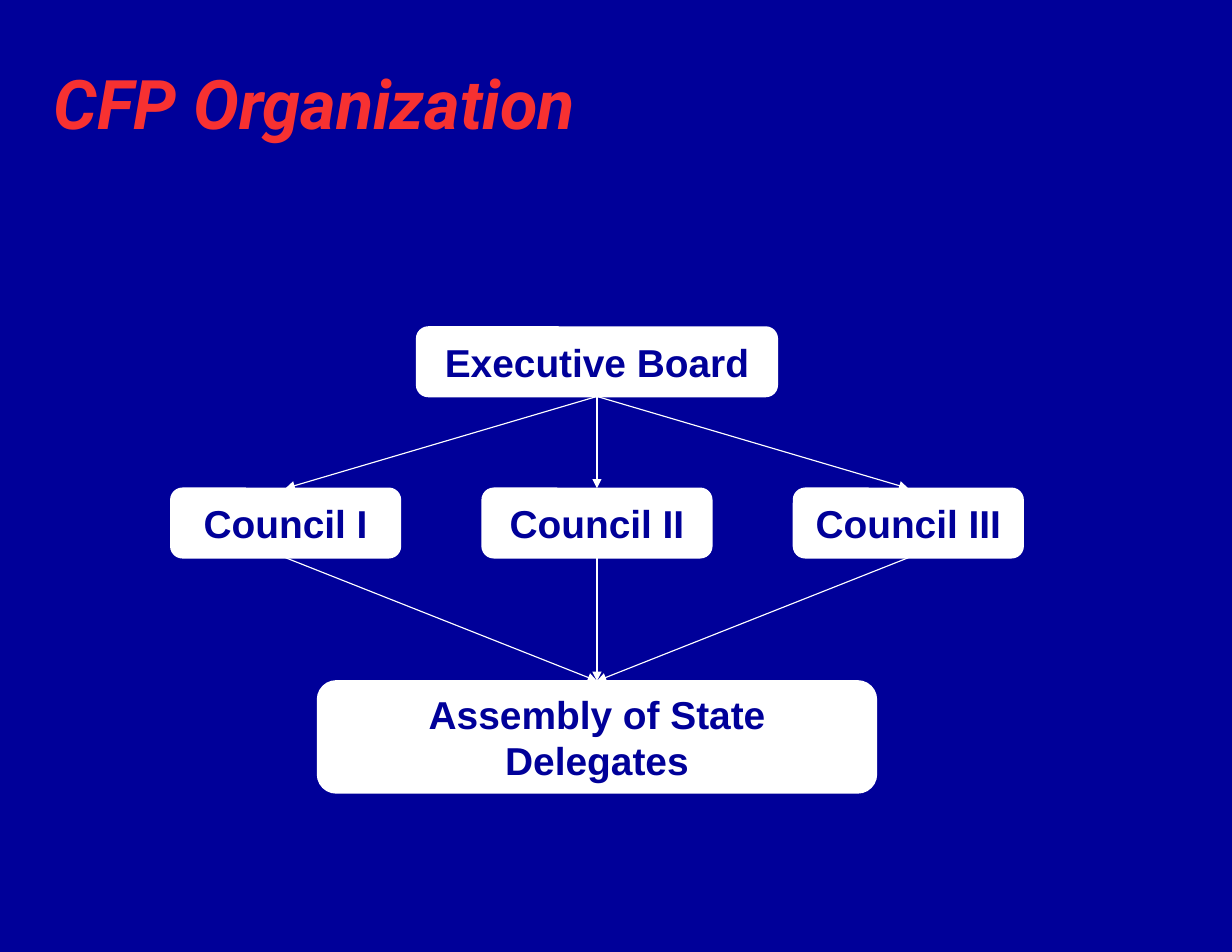
from dataclasses import dataclass

from lxml import etree
from pptx import Presentation
from pptx import util as u
from pptx.dml.color import RGBColor
from pptx.enum import shapes, text
from pptx.oxml.ns import qn


@dataclass
class Theme:
    navy: RGBColor = RGBColor.from_string("000099")
    white: RGBColor = RGBColor.from_string("FFFFFF")
    red: RGBColor = RGBColor.from_string("F73131")
    head: u.Pt = u.Pt(44)
    label: u.Pt = u.Pt(25)


theme = Theme()
FRAME = {
    "word_wrap": True, "auto_size": text.MSO_AUTO_SIZE.NONE,
    "vertical_anchor": text.MSO_ANCHOR.MIDDLE,
    "margin_left": u.Inches(0.11), "margin_right": u.Inches(0.11),
    "margin_top": u.Inches(0.06), "margin_bottom": u.Inches(0.06),
}


def write(shape, words, align, color, **font):
    frame = shape.text_frame
    for key, val in FRAME.items():
        setattr(frame, key, val)
    para = frame.paragraphs[0]
    para.alignment = align
    run = para.add_run()
    run.text = words
    for key, val in font.items():
        setattr(run.font, key, val)
    run.font.color.rgb = color


def link(start, end):
    line = slide.shapes.add_connector(shapes.MSO_CONNECTOR.STRAIGHT, 0, 0, 0, 0)
    line.begin_connect(start, 2)  # bottom centre
    line.end_connect(end, 0)  # top centre
    line.line.color.rgb = theme.white
    line.line.width = u.Pt(0.75)
    etree.SubElement(line.line._get_or_add_ln(), qn("a:tailEnd"), type="triangle")
    etree.SubElement(line._element.spPr, qn("a:effectLst"))


# Slide and background
deck = Presentation()
deck.slide_width, deck.slide_height = u.Inches(11), u.Inches(8.5)
slide = deck.slides.add_slide(deck.slide_layouts[5])
slide.background.fill.solid()
slide.background.fill.fore_color.rgb = theme.navy

# Title
title = slide.shapes.title
title.left, title.top = u.Inches(0.37), u.Inches(0.28)
title.width, title.height = u.Inches(8.43), u.Inches(1.26)
write(title, "CFP Organization", text.PP_ALIGN.LEFT, theme.red,
      name="Roboto", size=theme.head, bold=True, italic=True)

# Boxes: centre x, top, width, height
MID, GAP = 5.33, 2.78
nodes = [("Executive Board", MID, 2.92, 3.22, 0.62)]
for step, mark in enumerate(("I", "II", "III"), -1):
    nodes.append((f"Council {mark}", MID + step * GAP, 4.36, 2.05, 0.62))
nodes.append(("Assembly of State Delegates", MID, 6.08, 4.99, 1))

boxes = []
for words, mid, top, wide, high in nodes:
    box = slide.shapes.add_shape(
        shapes.MSO_SHAPE.ROUNDED_RECTANGLE,
        *map(u.Inches, (mid - wide / 2, top, wide, high)))
    box.shadow.inherit = False
    box.fill.solid()
    box.fill.fore_color.rgb = box.line.color.rgb = theme.white
    box.line.width = u.Pt(1)
    write(box, words, text.PP_ALIGN.CENTER, theme.navy,
          name="Arial", size=theme.label, bold=True)
    boxes.append(box)

# Arrows from the board through each council to the assembly
board, *councils, hall = boxes
for council in councils:
    link(board, council)
    link(council, hall)

deck.save("out.pptx")
